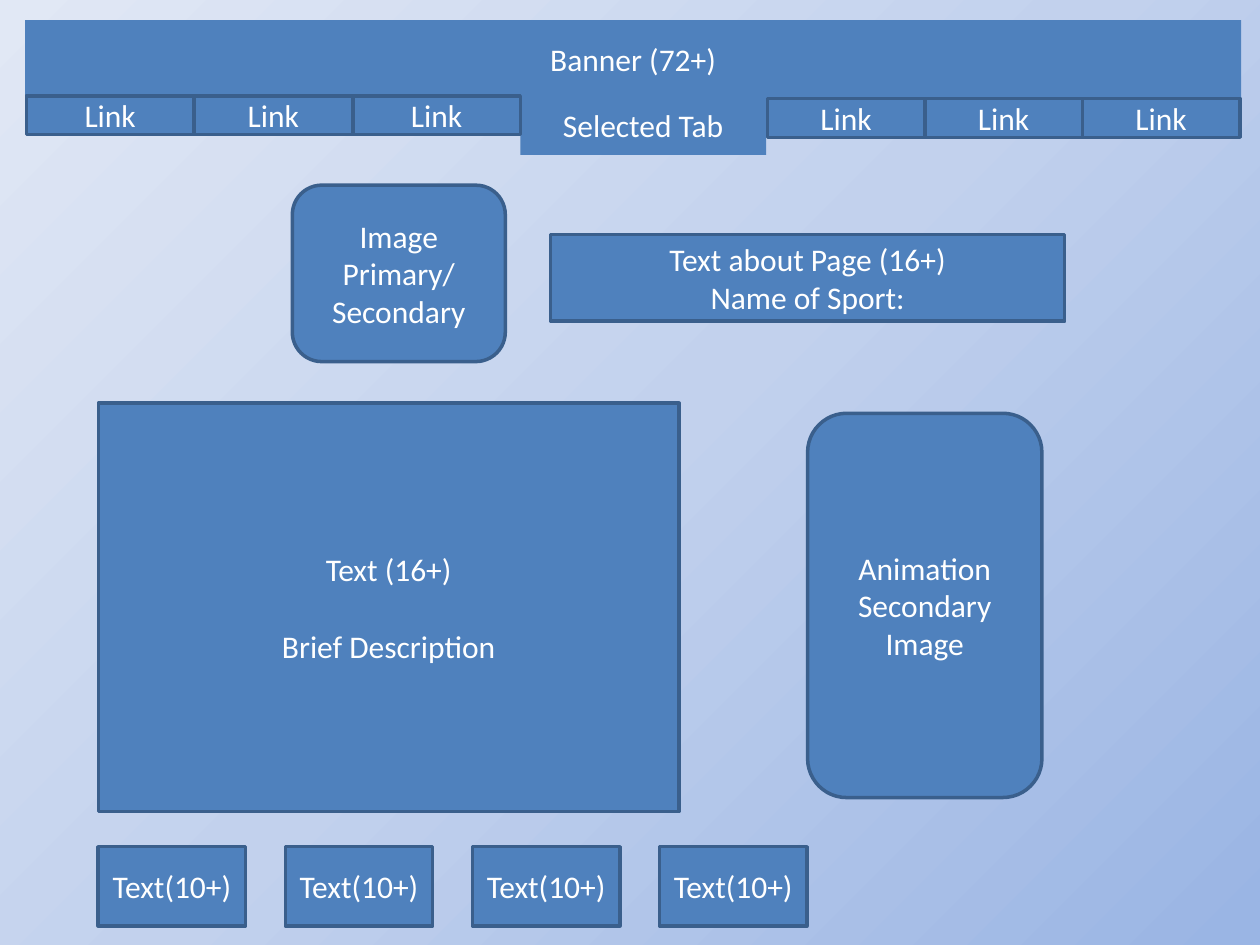
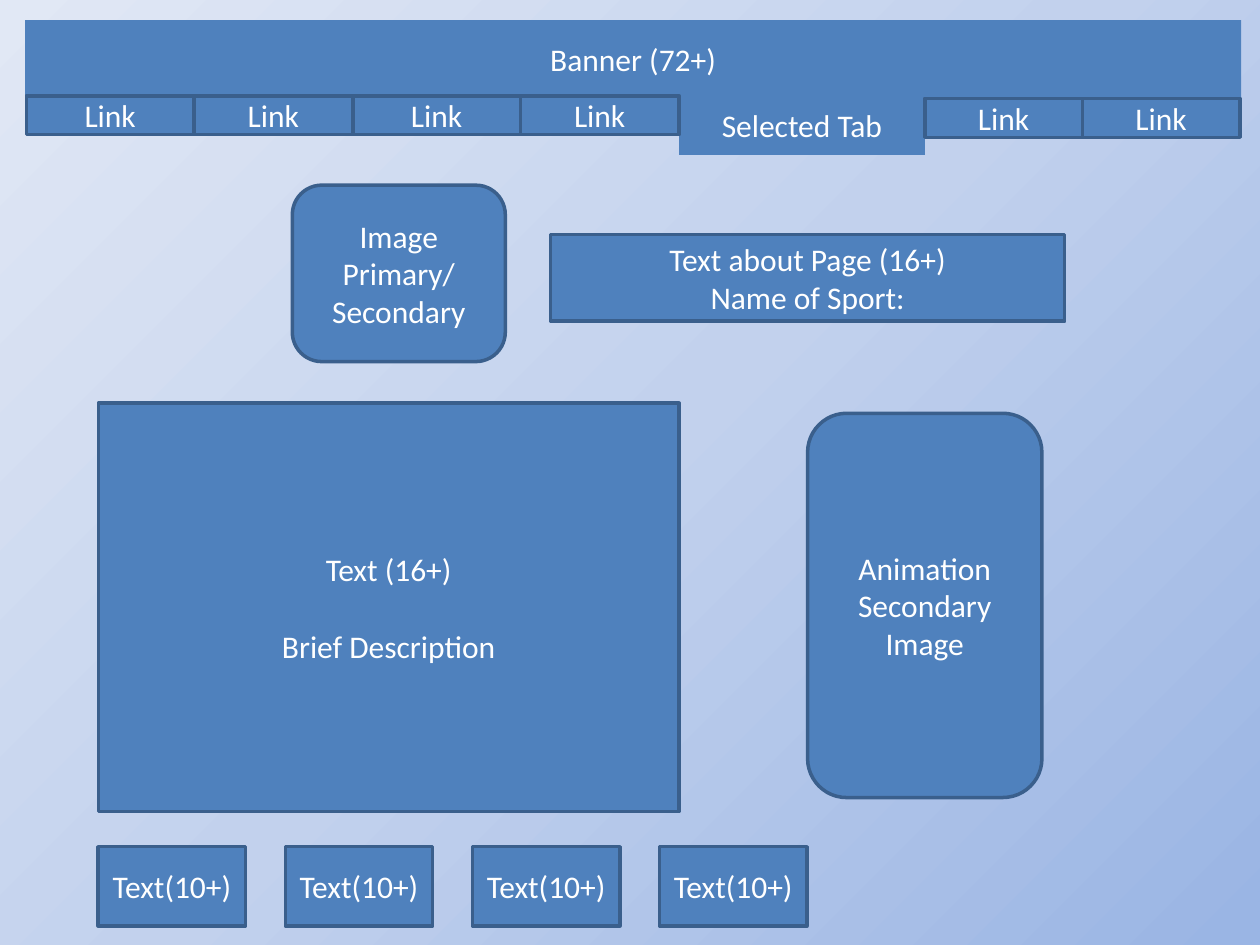
"""Build two wireframe pages that differ only in the selected tab."""
from lxml import etree
from pptx import Presentation
from pptx.dml.color import RGBColor
from pptx.enum.shapes import MSO_SHAPE
from pptx.enum.text import MSO_ANCHOR, MSO_AUTO_SIZE, PP_ALIGN
from pptx.oxml.ns import qn
from pptx.util import Inches, Pt

RECTANGLE = MSO_SHAPE.RECTANGLE
ROUNDED = MSO_SHAPE.ROUNDED_RECTANGLE
CENTER = PP_ALIGN.CENTER

BLOCK_BLUE = RGBColor(0x4F, 0x81, 0xBD)
EDGE_BLUE = RGBColor(0x3A, 0x5F, 0x8C)
WHITE = RGBColor(0xFF, 0xFF, 0xFF)
BACKGROUND_STOPS = {
    1: RGBColor(0x9A, 0xB5, 0xE4),
    50: RGBColor(0xC2, 0xD1, 0xED),
    100: RGBColor(0xE1, 0xE8, 0xF5),
}

GRID_UNIT = Inches(1)
GRID_COLUMNS, GRID_ROWS = 10, 7.5
TITLE_ONLY_LAYOUT = 5

FONT_FORMAT = {"name": "Calibri", "size": Pt(18), "bold": False}
FRAME_FORMAT = {
    "word_wrap": True,
    "auto_size": MSO_AUTO_SIZE.NONE,
    "vertical_anchor": MSO_ANCHOR.MIDDLE,
}
LINE_GAP = Pt(22)

BANNER_BOX = (0.2, 0.16, 9.65, 0.62)
TABS_LEFT, TABS_RIGHT = 0.21, 9.84
LEFT_TAB_TOP, RIGHT_TAB_TOP = 0.76, 0.78
LEFT_TAB_WIDTHS = (1.33, 1.26, 1.33, 1.26)
RIGHT_TAB_WIDTH = 1.25
TAB_HEIGHT = 0.31
SELECTED_WIDTH, SELECTED_HEIGHT = 1.95, 0.47
LINK_COUNT = 6

MARGIN = 0.78
NOTE_COUNT, NOTE_PITCH = 4, 1.485
NOTE_TOP, NOTE_WIDTH, NOTE_HEIGHT = 6.72, 1.17, 0.63


def set_attributes(target, values):
    """Apply every format value to the target."""
    for name, value in values.items():
        setattr(target, name, value)


def grid_lengths(box):
    """Turn grid columns and rows into slide lengths."""
    return [round(cells * GRID_UNIT) for cells in box]


def write_lines(shape, lines, gap=0):
    """Write centred white lines, with a gap between them."""
    frame = shape.text_frame
    set_attributes(frame, FRAME_FORMAT)
    for index, line in enumerate(lines):
        paragraph = frame.add_paragraph() if index else frame.paragraphs[0]
        paragraph.text = line
        paragraph.alignment = CENTER
        paragraph.space_before = gap if index else 0
        set_attributes(paragraph.font, FONT_FORMAT)
        paragraph.font.color.rgb = WHITE


def style_block(shape, outlined):
    """Give a block its blue fill and its edge, if any."""
    shape.shadow.inherit = False
    shape.fill.solid()
    shape.fill.fore_color.rgb = BLOCK_BLUE
    if outlined:
        shape.line.color.rgb = EDGE_BLUE
        shape.line.width = Pt(2)
    else:
        shape.line.fill.background()


def add_block(slide, box, *lines, kind=RECTANGLE, outlined=True, gap=0):
    """Add a labelled block at a grid box."""
    shape = slide.shapes.add_shape(kind, *grid_lengths(box))
    style_block(shape, outlined)
    write_lines(shape, lines, gap)


def add_banner(slide):
    """Turn the title placeholder into the page banner."""
    banner = slide.shapes.title
    names = ("left", "top", "width", "height")
    set_attributes(banner, dict(zip(names, grid_lengths(BANNER_BOX))))
    style_block(banner, outlined=False)
    write_lines(banner, ["Banner (72+)"])


def add_tabs(slide, links_before):
    """Add the links on both sides of the selected tab."""
    widths = LEFT_TAB_WIDTHS[:links_before]
    selected_left = TABS_LEFT + sum(widths)
    add_block(slide, (selected_left, LEFT_TAB_TOP, SELECTED_WIDTH, SELECTED_HEIGHT),
              "Selected Tab", outlined=False)
    for index, width in enumerate(widths):
        left = TABS_LEFT + sum(widths[:index])
        add_block(slide, (left, LEFT_TAB_TOP, width, TAB_HEIGHT), "Link")
    for remaining in range(LINK_COUNT - links_before, 0, -1):
        left = TABS_RIGHT - remaining * RIGHT_TAB_WIDTH
        add_block(slide, (left, RIGHT_TAB_TOP, RIGHT_TAB_WIDTH, TAB_HEIGHT), "Link")


def add_content(slide):
    """Add the text and image areas of the page."""
    add_block(slide, (4.37, 1.86, 4.08, 0.69),
              "Text about Page (16+)", "Name of Sport:")
    add_block(slide, (2.32, 1.47, 1.69, 1.4),
              "Image", "Primary/ Secondary", kind=ROUNDED)
    for index in range(NOTE_COUNT):
        left = MARGIN + index * NOTE_PITCH
        add_block(slide, (left, NOTE_TOP, NOTE_WIDTH, NOTE_HEIGHT), "Text(10+)")
    add_block(slide, (MARGIN, 3.2, 4.61, 3.24),
              "Text (16+)", "Brief Description", gap=LINE_GAP)
    add_block(slide, (6.41, 3.28, 1.86, 3.05),
              "Animation", "Secondary Image", kind=ROUNDED)


def set_background(master):
    """Give the master a gradient that spreads from the lower right corner."""
    master.background.fill.solid()
    properties = master.element.find(".//" + qn("p:bgPr"))
    gradient = etree.Element(qn("a:gradFill"), rotWithShape="1")
    stops = etree.SubElement(gradient, qn("a:gsLst"))
    for percent, color in BACKGROUND_STOPS.items():
        stop = etree.SubElement(stops, qn("a:gs"), pos=str(percent * 1000))
        etree.SubElement(stop, qn("a:srgbClr"), val=str(color))
    spread = etree.SubElement(gradient, qn("a:path"), path="circle")
    etree.SubElement(spread, qn("a:fillToRect"), l="100000", t="100000")
    properties.replace(properties[0], gradient)


def add_page(presentation, links_before):
    """Add one wireframe page."""
    layout = presentation.slide_layouts[TITLE_ONLY_LAYOUT]
    slide = presentation.slides.add_slide(layout)
    add_banner(slide)
    add_tabs(slide, links_before)
    add_content(slide)


def main():
    """Build and save the presentation."""
    presentation = Presentation()
    presentation.slide_width, presentation.slide_height = grid_lengths(
        (GRID_COLUMNS, GRID_ROWS))
    set_background(presentation.slide_master)
    for links_before in (3, 4):
        add_page(presentation, links_before)
    presentation.save("out.pptx")


if __name__ == "__main__":
    main()
